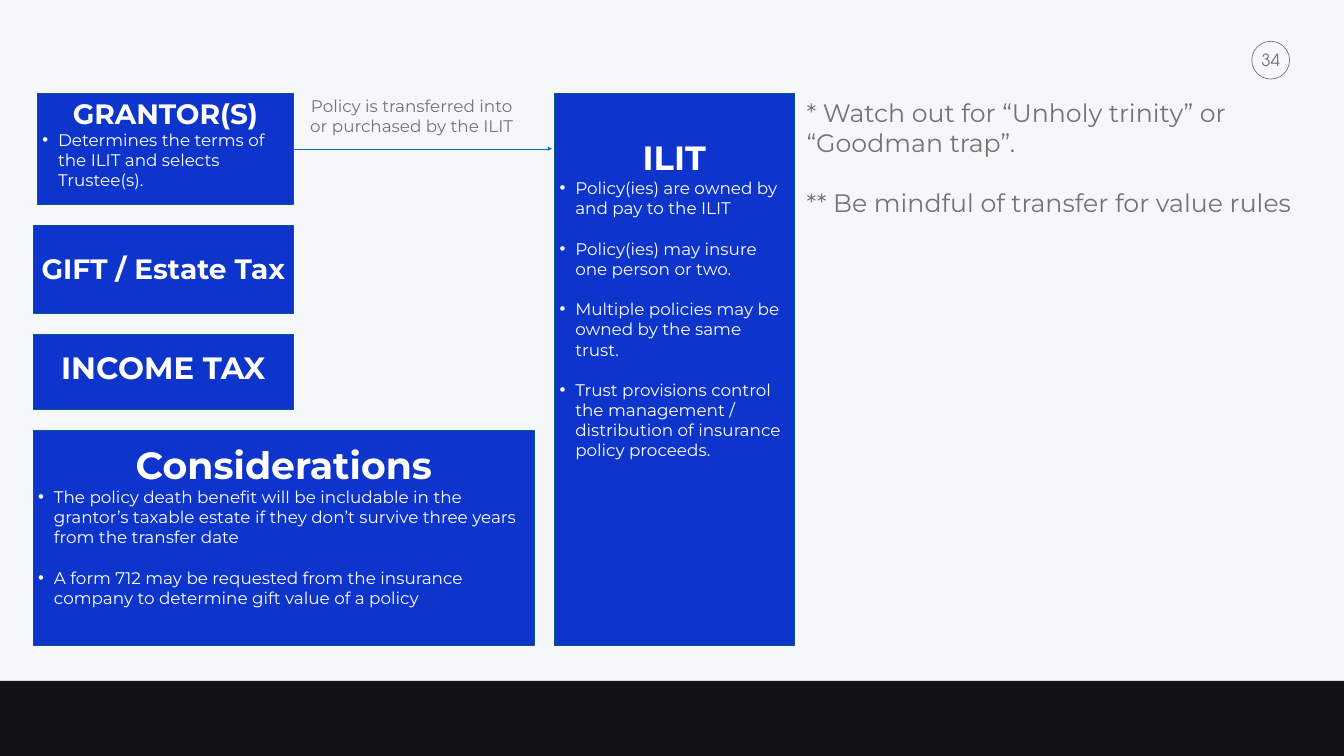
from dataclasses import dataclass

from lxml.etree import SubElement
from pptx import Presentation
from pptx.dml.color import RGBColor
from pptx.enum.shapes import MSO_CONNECTOR, MSO_SHAPE
from pptx.enum.text import MSO_ANCHOR, MSO_AUTO_SIZE, PP_ALIGN
from pptx.oxml.ns import qn
from pptx.util import Pt


@dataclass(frozen=True)
class Theme:
    """Colours, fonts and type sizes of the slide."""

    background: RGBColor = RGBColor(0xF6, 0xF7, 0xFA)
    panel: RGBColor = RGBColor(0x0E, 0x35, 0xCB)
    outline: RGBColor = RGBColor(0x0A, 0x55, 0x84)
    arrow: RGBColor = RGBColor(0x0D, 0x73, 0xB2)
    footer: RGBColor = RGBColor(0x13, 0x13, 0x16)
    grey: RGBColor = RGBColor(0x73, 0x75, 0x72)
    white: RGBColor = RGBColor(0xFF, 0xFF, 0xFF)
    font: str = "Montserrat"
    number_font: str = "TeX Gyre Adventor"
    body_size: int = 24
    note_size: int = 36
    heading_size: int = 40
    income_size: int = 44
    ilit_size: int = 48
    considerations_size: int = 54


THEME = Theme()
SLIDE_WIDTH, SLIDE_HEIGHT = 1919.52, 1080
LEFT, STACK_TOP, STACK_GAP = 47.5, 133.9, 30.2
BLANK_LINE = 29
BULLET_INDENT = 22.5

STACK = [
    (LEFT + 5.8, 365.8, 157.7, 3.5, "GRANTOR(S)", THEME.heading_size,
     ["Determines the terms of the ILIT and selects Trustee(s)."]),
    (LEFT, 371.5, 125.3, 37, "GIFT / Estate Tax", THEME.heading_size, []),
    (LEFT, 371.5, 108, 21, "INCOME TAX", THEME.income_size, []),
    (LEFT, 715.7, 306.7, 15, "Considerations", THEME.considerations_size,
     ["The policy death benefit will be includable in the grantor’s taxable "
      "estate if they don’t survive three years from the transfer date",
      "A form 712 may be requested from the insurance company to determine "
      "gift value of a policy"]),
]
ILIT_POINTS = [
    "Policy(ies) are owned by and pay to the ILIT",
    "Policy(ies) may insure one person or two.",
    "Multiple policies may be owned by the same trust.",
    "Trust provisions control the management / distribution of insurance policy proceeds.",
]
NOTES = [
    "* Watch out for “Unholy trinity” or “Goodman trap”.",
    "** Be mindful of transfer for value rules",
]


def format_paragraph(paragraph, size, color, bold=False, align=PP_ALIGN.LEFT,
                     before=0, font=THEME.font):
    """Set the spacing, alignment and font of a paragraph and its runs."""
    paragraph.alignment = align
    paragraph.space_before = Pt(before)
    for run in paragraph.runs:
        run.font.name = font
        run.font.size = Pt(size)
        run.font.bold = bold
        run.font.color.rgb = color


def set_bullet(paragraph, character=None):
    """Give a paragraph a hanging bullet, or none at all."""
    properties = paragraph._p.get_or_add_pPr()
    indent = Pt(BULLET_INDENT) if character else 0
    properties.set("marL", str(indent))
    properties.set("indent", str(-indent))
    if character:
        SubElement(properties, qn("a:buFont")).set("typeface", "Arial")
        SubElement(properties, qn("a:buChar")).set("char", character)
    else:
        SubElement(properties, qn("a:buNone"))


def add_plain_shape(slide, kind, left, top, width, height, fill=None, line=None):
    """Add a preset shape without a shadow."""
    shape = slide.shapes.add_shape(kind, Pt(left), Pt(top), Pt(width), Pt(height))
    shape.shadow.inherit = False
    if fill is None:
        shape.fill.background()
    else:
        shape.fill.solid()
        shape.fill.fore_color.rgb = fill
    if line is None:
        shape.line.fill.background()
    else:
        shape.line.color.rgb = line
        shape.line.width = Pt(1)
    return shape


def add_panel(slide, left, top, width, height, inset, heading, size, points):
    """Add a blue panel with a bold heading and bulleted points."""
    shape = add_plain_shape(slide, MSO_SHAPE.RECTANGLE, left, top, width, height,
                            THEME.panel, THEME.outline)
    frame = shape.text_frame
    frame.word_wrap = True
    frame.vertical_anchor = MSO_ANCHOR.TOP
    frame.margin_top = Pt(inset)
    frame.text = "\n".join([heading, *points])
    title, *bullets = frame.paragraphs
    format_paragraph(title, size, THEME.white, True, PP_ALIGN.CENTER)
    for index, paragraph in enumerate(bullets):
        set_bullet(paragraph, "•")
        format_paragraph(paragraph, THEME.body_size, THEME.white,
                         before=BLANK_LINE if index else 0)


def add_label(slide, left, top, width, height, text, font=THEME.font, wrap=True):
    """Add a centred grey text box."""
    box = slide.shapes.add_textbox(Pt(left), Pt(top), Pt(width), Pt(height))
    box.text_frame.word_wrap = wrap
    box.text_frame.text = text
    format_paragraph(box.text_frame.paragraphs[0], THEME.body_size, THEME.grey,
                     align=PP_ALIGN.CENTER, font=font)


def add_arrow(slide, start, end, top):
    """Add a thin horizontal arrow."""
    arrow = slide.shapes.add_connector(MSO_CONNECTOR.STRAIGHT, Pt(start), Pt(top),
                                       Pt(end), Pt(top))
    arrow.line.color.rgb = THEME.arrow
    arrow.line.width = Pt(0.5)
    SubElement(arrow.line._get_or_add_ln(), qn("a:tailEnd")).set("type", "triangle")
    SubElement(arrow._element.spPr, qn("a:effectLst"))


def fill_notes(placeholder):
    """Place the cautionary notes in the body placeholder."""
    placeholder.left, placeholder.top = Pt(1144.8), Pt(91.4)
    placeholder.width, placeholder.height = Pt(731.5), Pt(356.4)
    frame = placeholder.text_frame
    frame.word_wrap = True
    frame.auto_size = MSO_AUTO_SIZE.NONE
    frame.vertical_anchor = MSO_ANCHOR.TOP
    frame.margin_top = Pt(47)
    frame.text = "\n".join(NOTES)
    for index, paragraph in enumerate(frame.paragraphs):
        set_bullet(paragraph)
        format_paragraph(paragraph, THEME.note_size, THEME.grey,
                         before=43 if index else 0)


def add_frame(slide):
    """Add the footer band and the circled slide number."""
    add_plain_shape(slide, MSO_SHAPE.RECTANGLE, 0, 972.7, SLIDE_WIDTH, 107.3,
                    THEME.footer)
    add_plain_shape(slide, MSO_SHAPE.OVAL, 1787.8, 59, 54, 54, line=THEME.grey)
    add_label(slide, 1785.6, 68, 58.3, 36, "34", THEME.number_font, False)


def main():
    """Build the slide and save it."""
    presentation = Presentation()
    presentation.slide_width, presentation.slide_height = Pt(SLIDE_WIDTH), Pt(SLIDE_HEIGHT)
    slide = presentation.slides.add_slide(presentation.slide_layouts[1])
    slide.background.fill.solid()
    slide.background.fill.fore_color.rgb = THEME.background
    title = slide.shapes.title._element
    title.getparent().remove(title)
    fill_notes(slide.placeholders[1])
    add_frame(slide)
    top = STACK_TOP
    for left, width, height, inset, heading, size, points in STACK:
        add_panel(slide, left, top, width, height, inset, heading, size, points)
        top += height + STACK_GAP
    add_panel(slide, 792, 133.2, 342, 789.1, 63, "ILIT", THEME.ilit_size, ILIT_POINTS)
    add_label(slide, 432.7, 133.2, 310.3, 65.5,
              "Policy is transferred into or purchased by the ILIT")
    add_arrow(slide, 419, 788.4, 212.4)
    presentation.save("out.pptx")


if __name__ == "__main__":
    main()
